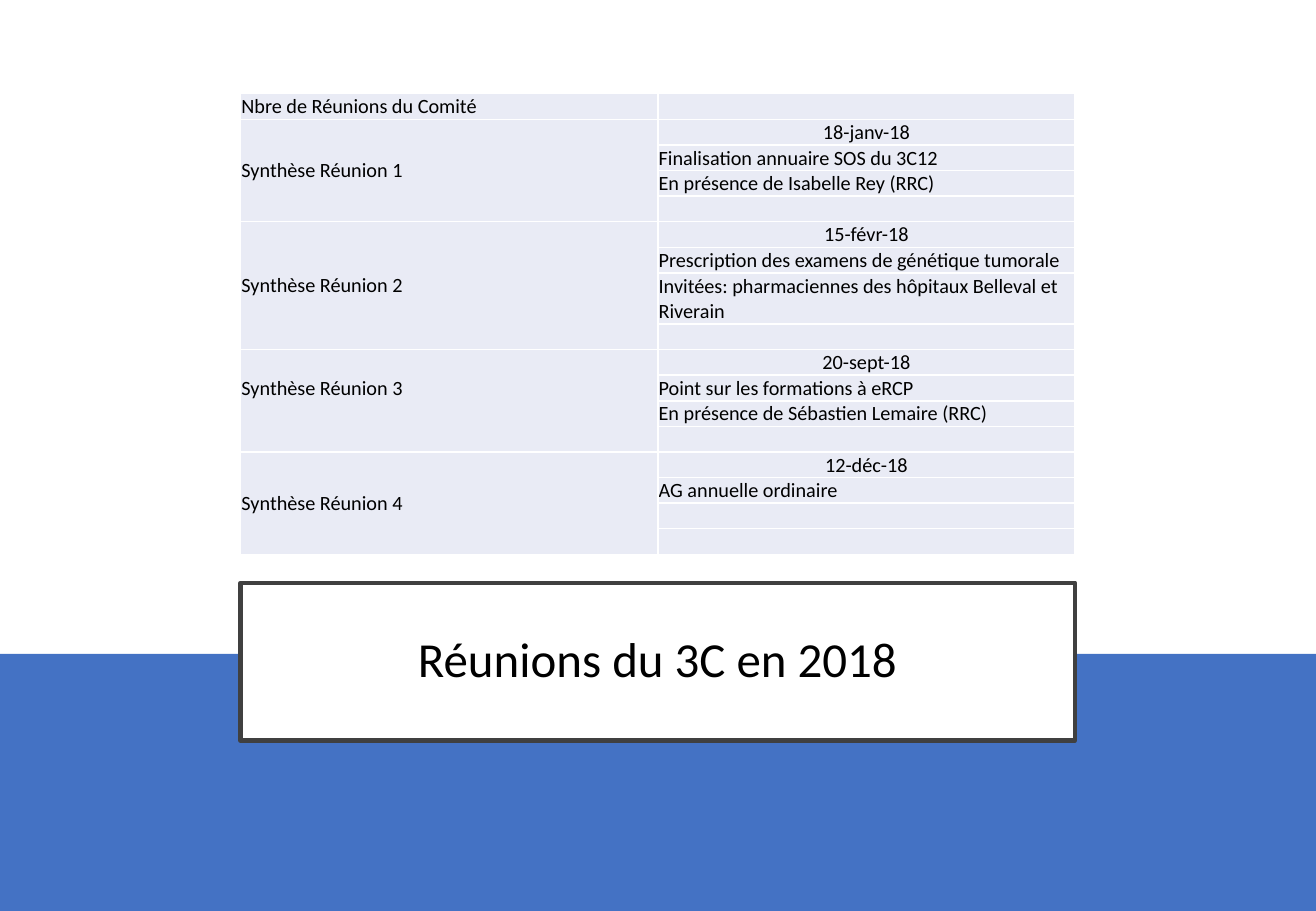
import pptx
import pptx.util
import pptx.dml.color
import pptx.enum.shapes
import pptx.enum.text
import pptx.oxml
import pptx.oxml.ns
import lxml.etree

TITLE = "Réunions du 3C en 2018"
HEAD = "Nbre de Réunions du Comité"
MEETS = [
    ("Synthèse Réunion 1", "18-janv-18",
     "Finalisation annuaire SOS du 3C12",
     "En présence de Isabelle Rey (RRC)", ""),
    ("Synthèse Réunion 2", "15-févr-18",
     "Prescription des examens de génétique tumorale",
     "Invitées: pharmaciennes des hôpitaux Belleval et Riverain", ""),
    ("Synthèse Réunion 3", "20-sept-18",
     "Point sur les formations à eRCP",
     "En présence de Sébastien Lemaire (RRC)", ""),
    ("Synthèse Réunion 4", "12-déc-18", "AG annuelle ordinaire", "", ""),
]
RAISED = "Synthèse Réunion 3"
FONT = "Calibri"
WIDE, HIGH = 780, 540
LEFT, SPAN = 142.6, 494.6
TOP, ROW = 55.6, 15.17

Pt = pptx.util.Pt
ALIGN = pptx.enum.text.PP_ALIGN
MIDDLE = pptx.enum.text.MSO_ANCHOR.MIDDLE
qn = pptx.oxml.ns.qn


def color(code):
    return pptx.dml.color.RGBColor.from_string(code)


def paint(obj, code):
    obj.fill.solid()
    obj.fill.fore_color.rgb = color(code)


def style(para, size):
    for run in para.runs:
        run.font.size = Pt(size)
        run.font.name = FONT
        run.font.color.rgb = color("000000")


def box(slide, x, y, w, h, code):
    rect = pptx.enum.shapes.MSO_SHAPE.RECTANGLE
    shape = slide.shapes.add_shape(rect, Pt(x), Pt(y), Pt(w), Pt(h))
    shape.shadow.inherit = False
    paint(shape, code)
    shape.line.fill.background()
    return shape


def edge(cell):
    props = cell._tc.get_or_add_tcPr()
    for side in ("lnL", "lnR", "lnT", "lnB"):
        line = lxml.etree.SubElement(props, qn("a:" + side), w=str(Pt(1)))
        fill = lxml.etree.SubElement(line, qn("a:solidFill"))
        lxml.etree.SubElement(fill, qn("a:srgbClr"), val="FFFFFF")


def put(cell, text, center):
    edge(cell)
    paint(cell, "E9EBF5")
    cell.vertical_anchor = MIDDLE
    cell.margin_left = cell.margin_right = cell.margin_top = Pt(0.5)
    cell.margin_bottom = Pt(14.6 if text == RAISED else 0)
    cell.text_frame.text = text
    para = cell.text_frame.paragraphs[0]
    para.alignment = ALIGN.CENTER if center else ALIGN.LEFT
    style(para, 12)
    if not text:
        lxml.etree.SubElement(para._p, qn("a:endParaRPr"), sz="1200")


def main():
    deck = pptx.Presentation()
    deck.slide_width, deck.slide_height = Pt(WIDE), Pt(HIGH)
    slide = deck.slides.add_slide(deck.slide_layouts[6])

    box(slide, 0, 387.6, WIDE, HIGH - 387.6, "4472C4")
    card = box(slide, LEFT, 345.4, SPAN, 93.6, "FFFFFF")
    card.line.color.rgb = color("404040")
    card.line.width = Pt(2.5)
    card.text_frame.text = TITLE
    card.text_frame.word_wrap = True
    card.text_frame.vertical_anchor = MIDDLE
    para = card.text_frame.paragraphs[0]
    para.alignment = ALIGN.CENTER
    para.line_spacing = 0.9
    style(para, 29)

    rows = [(HEAD, "", False)]
    for name, *notes in MEETS:
        for i, note in enumerate(notes):
            rows.append(("" if i else name, note, i == 0))
    frame = slide.shapes.add_table(
        len(rows), 2, Pt(LEFT), Pt(TOP), Pt(SPAN), Pt(ROW * len(rows)))
    table = frame.table
    table.first_row = table.horz_banding = False
    for col in table.columns:
        col.width = Pt(SPAN / 2)
    for r, (name, note, dated) in enumerate(rows):
        table.rows[r].height = Pt(ROW * 2 if "Invitées" in note else ROW)
        put(table.cell(r, 0), name, False)
        put(table.cell(r, 1), note, dated)
    for r in range(1, len(rows), 4):
        table.cell(r, 0).merge(table.cell(r + 3, 0))

    deck.save("out.pptx")


if __name__ == "__main__":
    main()
